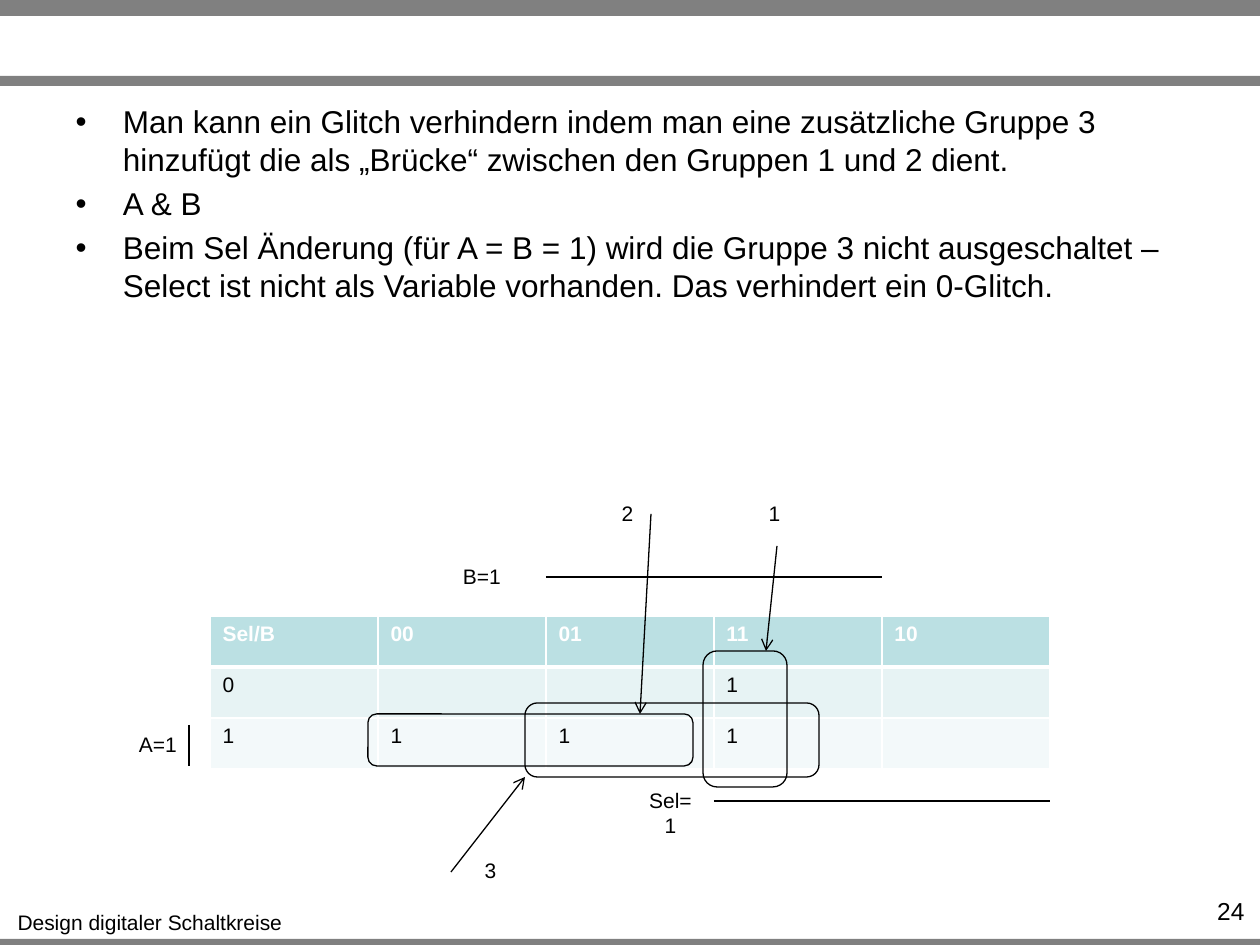
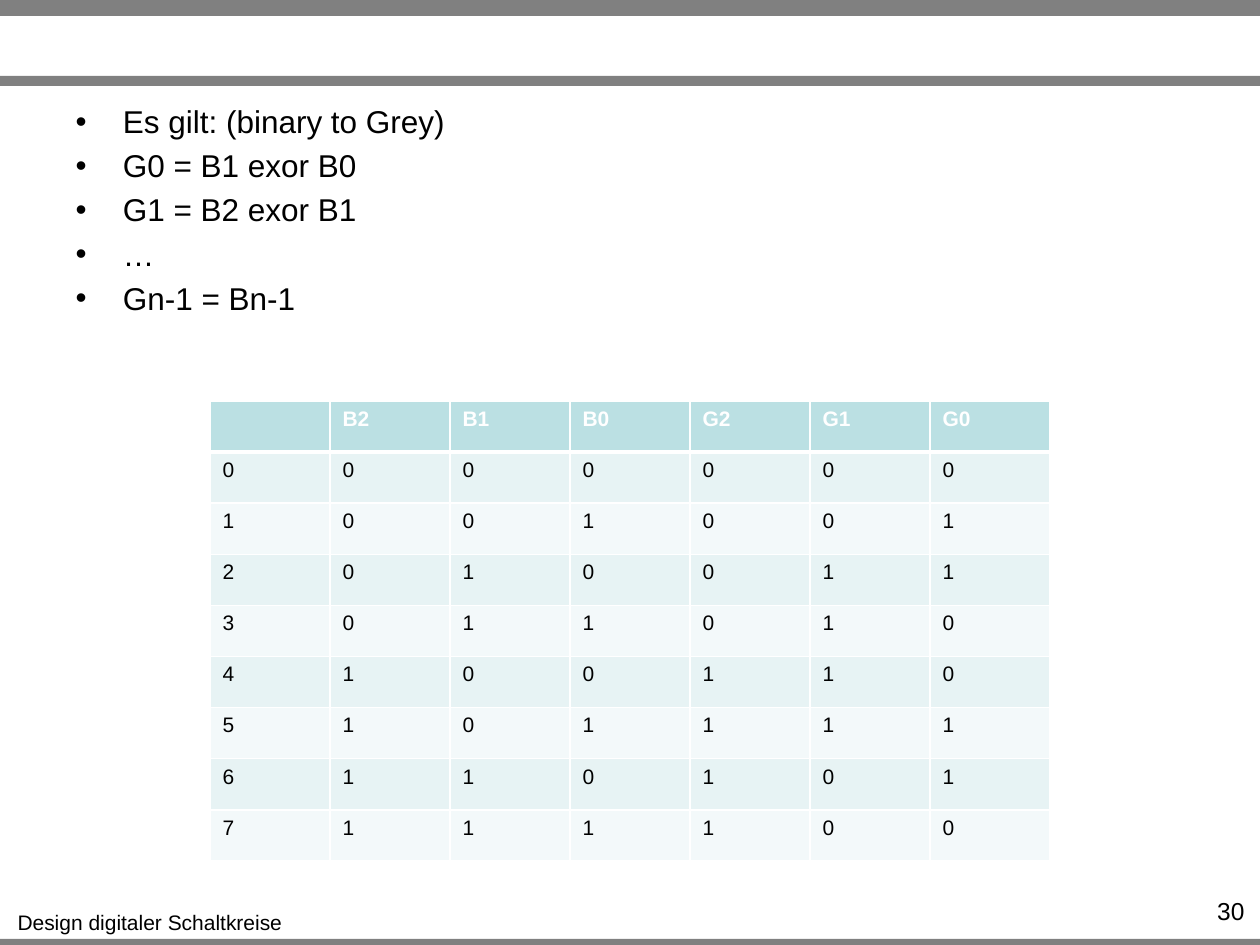
from dataclasses import dataclass
from typing import Any

from lxml import etree
from pptx import Presentation
from pptx.dml.color import RGBColor
from pptx.enum.shapes import MSO_CONNECTOR, MSO_SHAPE
from pptx.enum.text import MSO_ANCHOR, MSO_AUTO_SIZE, PP_ALIGN
from pptx.oxml.ns import qn
from pptx.util import Emu, Pt

RECT, ROUND_RECT = MSO_SHAPE.RECTANGLE, MSO_SHAPE.ROUNDED_RECTANGLE
STRAIGHT = MSO_CONNECTOR.STRAIGHT
LEFT, CENTER, RIGHT = PP_ALIGN.LEFT, PP_ALIGN.CENTER, PP_ALIGN.RIGHT
TOP = MSO_ANCHOR.TOP
FIT_NONE, FIT_SHAPE = MSO_AUTO_SIZE.NONE, MSO_AUTO_SIZE.SHAPE_TO_FIT_TEXT

BLACK = RGBColor(0x00, 0x00, 0x00)
WHITE = RGBColor(0xFF, 0xFF, 0xFF)
GRAY = RGBColor(0x80, 0x80, 0x80)
HEADER_FILL = RGBColor(0xBB, 0xE0, 0xE3)
ROW_FILLS = (RGBColor(0xE7, 0xF3, 0xF4), RGBColor(0xF3, 0xF9, 0xFA))

BODY_FONT = {"name": "Arial", "size": Pt(18)}
LABEL_FONT = {"name": "Arial", "size": Pt(12)}
HEADER_FONT = {"name": "Arial", "size": Pt(12), "bold": True}
NUMBER_FONT = {"name": "Arial", "size": Pt(14)}
LABEL_FRAME = {"word_wrap": False, "auto_size": FIT_SHAPE, "vertical_anchor": TOP}
FIXED_FRAME = {"word_wrap": True, "auto_size": FIT_NONE, "vertical_anchor": TOP}
LINE_WIDTH = Pt(0.75)
EMU_PER_PX = 914400 / 126


@dataclass(frozen=True)
class Box:
    x: int
    y: int
    w: int
    h: int

    def emu(self) -> tuple[Emu, ...]:
        return tuple(px(v) for v in (self.x, self.y, self.w, self.h))


@dataclass(frozen=True)
class Label:
    text: str
    box: Box


@dataclass(frozen=True)
class Line:
    x1: int
    y1: int
    x2: int
    y2: int
    arrow: bool = False


@dataclass(frozen=True)
class Grid:
    box: Box
    rows: list[list[str]]


SLIDE_W, SLIDE_H = 1260, 945
BODY_BOX = Box(63, 96, 1134, 251)
NUMBER_BOX = Box(1147, 890, 110, 30)
BANDS = [Box(0, 939, SLIDE_W, 10), Box(0, 0, SLIDE_W, 16), Box(0, 76, SLIDE_W, 10)]
FOOTER = Label("Design digitaler Schaltkreise", Box(4, 903, 292, 38))

GLITCH_POINTS = [
    "Man kann ein Glitch verhindern indem man eine zusätzliche Gruppe 3 "
    "hinzufügt die als „Brücke“ zwischen den Gruppen 1 und 2 dient.",
    "A & B",
    "Beim Sel Änderung (für A = B = 1) wird die Gruppe 3 nicht ausgeschaltet – "
    "Select ist nicht als Variable vorhanden. Das verhindert ein 0-Glitch.",
]
KARNAUGH = Grid(Box(210, 616, 840, 153), [
    ["Sel/B", "00", "01", "11", "10"],
    ["0", "", "", "1", ""],
    ["1", "1", "1", "1", ""],
])
GROUPS = [Box(703, 651, 84, 136), Box(368, 714, 325, 52), Box(525, 703, 294, 74)]
LINES = [
    Line(546, 577, 882, 577),
    Line(714, 801, 1050, 801),
    Line(189, 725, 189, 766),
    Line(777, 546, 766, 651, arrow=True),
    Line(651, 514, 640, 714, arrow=True),
    Line(451, 872, 525, 777, arrow=True),
]
LABELS = [
    Label("B=1", Box(450, 557, 64, 38)),
    Label("Sel=1", Box(631, 781, 79, 38)),
    Label("A=1", Box(126, 725, 64, 38)),
    Label("1", Box(756, 494, 37, 38)),
    Label("2", Box(609, 494, 37, 38)),
    Label("3", Box(472, 851, 37, 38)),
]

GRAY_CODE_POINTS = [
    "Es gilt: (binary to Grey)",
    "G0 = B1 exor B0",
    "G1 = B2 exor B1",
    "…",
    "Gn-1 = Bn-1",
]
GRAY_CODE = Grid(Box(210, 401, 840, 460), [
    ["", "B2", "B1", "B0", "G2", "G1", "G0"],
    *([str(n), *f"{n:03b}", *f"{n ^ n >> 1:03b}"] for n in range(8)),
])


def px(v: int) -> Emu:
    return Emu(round(v * EMU_PER_PX))


def apply(target: Any, values: dict[str, Any]) -> None:
    for name, value in values.items():
        setattr(target, name, value)


def write(p: Any, text: str, font: dict[str, Any], color: RGBColor = BLACK) -> None:
    r = p.add_run()
    r.text = text
    apply(r.font, font)
    r.font.color.rgb = color


def add_label(slide: Any, label: Label, font: dict[str, Any] = LABEL_FONT,
              frame: dict[str, Any] = LABEL_FRAME, align: PP_ALIGN = CENTER) -> None:
    tf = slide.shapes.add_textbox(*label.box.emu()).text_frame
    apply(tf, frame)
    p = tf.paragraphs[0]
    p.alignment = align
    write(p, label.text, font)


def add_band(slide: Any, box: Box) -> None:
    sp = slide.shapes.add_shape(RECT, *box.emu())
    sp.shadow.inherit = False
    sp.fill.solid()
    sp.fill.fore_color.rgb = GRAY
    sp.line.fill.background()


def add_group(slide: Any, box: Box) -> None:
    sp = slide.shapes.add_shape(ROUND_RECT, *box.emu())
    sp.shadow.inherit = False
    sp.fill.background()
    sp.line.color.rgb = BLACK
    sp.line.width = LINE_WIDTH


def add_line(slide: Any, line: Line) -> None:
    ends = (px(v) for v in (line.x1, line.y1, line.x2, line.y2))
    cxn = slide.shapes.add_connector(STRAIGHT, *ends)
    cxn.line.color.rgb = BLACK
    cxn.line.width = LINE_WIDTH
    sp_pr = cxn._element.spPr
    if line.arrow:
        etree.SubElement(sp_pr.find(qn("a:ln")), qn("a:tailEnd"), type="arrow")
    etree.SubElement(sp_pr, qn("a:effectLst"))


def add_borders(cell: Any, row: int) -> None:
    tc_pr = cell._tc.get_or_add_tcPr()
    widths = {"L": 1, "R": 1, "T": 3 if row == 1 else 1, "B": 3 if row == 0 else 1}
    for side, width in widths.items():
        ln = etree.SubElement(tc_pr, qn(f"a:ln{side}"), w=str(Pt(width)))
        fill = etree.SubElement(ln, qn("a:solidFill"))
        etree.SubElement(fill, qn("a:srgbClr"), val=str(WHITE))


def add_grid(slide: Any, grid: Grid) -> None:
    size = len(grid.rows), len(grid.rows[0])
    table = slide.shapes.add_table(*size, *grid.box.emu()).table
    table.horz_banding = False
    for i, row in enumerate(grid.rows):
        for j, text in enumerate(row):
            cell = table.cell(i, j)
            add_borders(cell, i)
            cell.fill.solid()
            cell.fill.fore_color.rgb = ROW_FILLS[(i - 1) % 2] if i else HEADER_FILL
            p = cell.text_frame.paragraphs[0]
            p.alignment = LEFT
            if text:
                write(p, text, LABEL_FONT if i else HEADER_FONT, BLACK if i else WHITE)


def add_body(slide: Any, points: list[str]) -> None:
    body = slide.placeholders[1]
    body.left, body.top, body.width, body.height = BODY_BOX.emu()
    tf = body.text_frame
    apply(tf, FIXED_FRAME)
    for i, text in enumerate(points):
        p = tf.add_paragraph() if i else tf.paragraphs[0]
        if i == 0:
            p.space_before = Pt(0)
        write(p, text, BODY_FONT)


def add_slide(prs: Any, number: int, points: list[str], grid: Grid) -> Any:
    slide = prs.slides.add_slide(prs.slide_layouts[1])
    title = slide.shapes.title._element
    title.getparent().remove(title)
    for band in BANDS:
        add_band(slide, band)
    add_label(slide, FOOTER)
    add_body(slide, points)
    add_label(slide, Label(str(number), NUMBER_BOX), NUMBER_FONT, FIXED_FRAME, RIGHT)
    add_grid(slide, grid)
    return slide


def main() -> None:
    prs = Presentation()
    prs.slide_width, prs.slide_height = px(SLIDE_W), px(SLIDE_H)
    slide = add_slide(prs, 24, GLITCH_POINTS, KARNAUGH)
    for line in LINES:
        add_line(slide, line)
    for group in GROUPS:
        add_group(slide, group)
    for label in LABELS:
        add_label(slide, label)
    add_slide(prs, 30, GRAY_CODE_POINTS, GRAY_CODE)
    prs.save("out.pptx")


if __name__ == "__main__":
    main()
